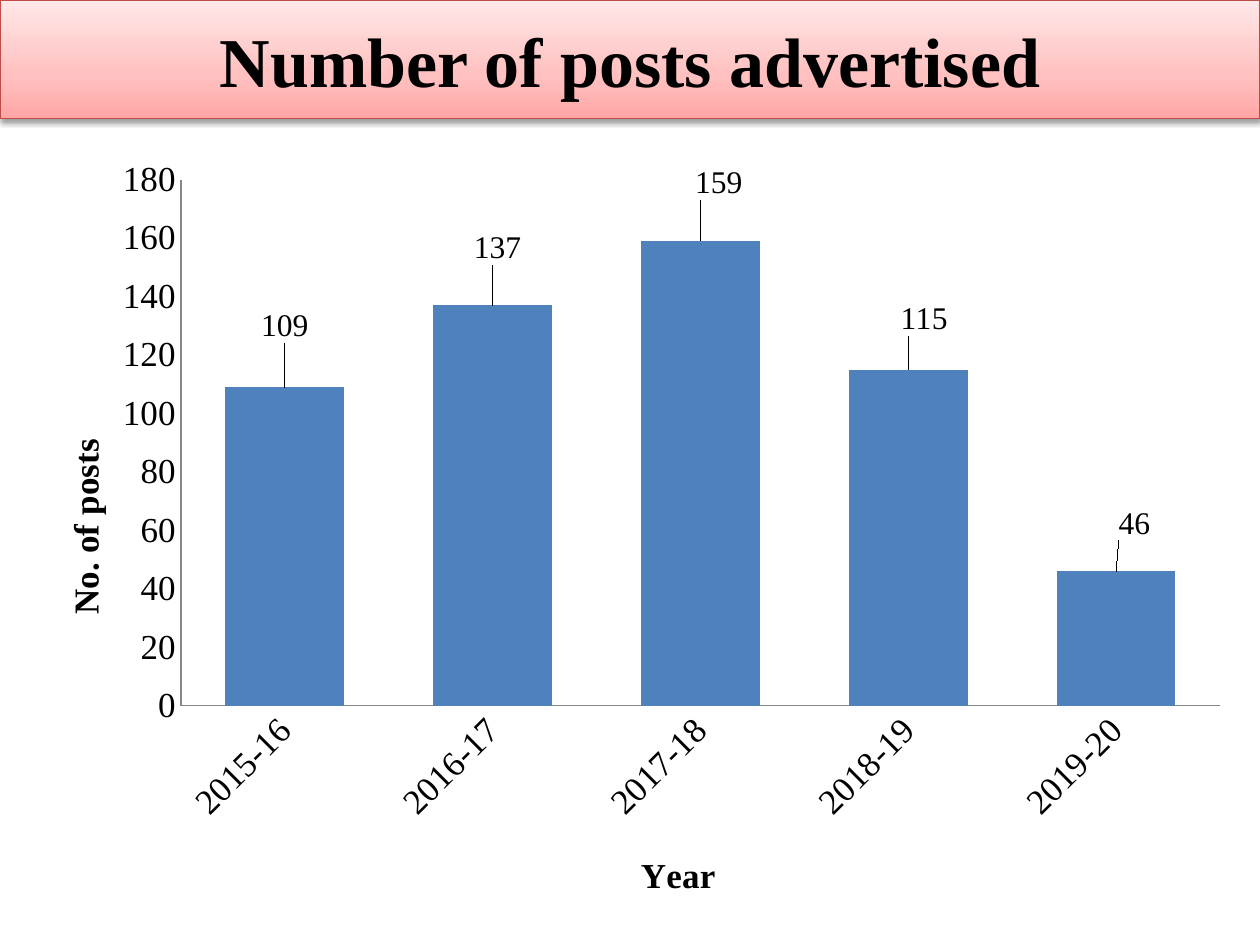
from typing import NamedTuple

from lxml import etree
from pptx import Presentation
from pptx.chart.data import CategoryChartData
from pptx.dml.color import RGBColor
from pptx.enum.chart import XL_CHART_TYPE, XL_LABEL_POSITION, XL_TICK_MARK
from pptx.enum.shapes import MSO_SHAPE
from pptx.enum.text import MSO_ANCHOR, PP_ALIGN
from pptx.oxml.ns import qn
from pptx.util import Cm, Pt

COLUMNS = XL_CHART_TYPE.COLUMN_CLUSTERED
ABOVE_BAR = XL_LABEL_POSITION.OUTSIDE_END
NO_TICK = XL_TICK_MARK.NONE
RECTANGLE = MSO_SHAPE.RECTANGLE
MIDDLE, CENTER = MSO_ANCHOR.MIDDLE, PP_ALIGN.CENTER

FONT = "Times New Roman"
COLORS = {"text": "000000", "bar": "4F81BD", "axis": "868686", "border": "BF4C48"}
BANNER_STOPS = {0: "FFA6A5", 35: "FFC0BF", 100: "FFE7E7"}  # percent: colour
TITLE_FORMAT = {"name": FONT, "size": Pt(40), "bold": True}
AXIS_TITLE_FORMAT = {"name": FONT, "size": Pt(20), "bold": True}
AXIS_FORMAT = {"name": FONT, "size": Pt(20), "bold": False}
LABEL_FORMAT = {"name": FONT, "size": Pt(18), "bold": False}


class YearPosts(NamedTuple):
    year: str
    posts: int
    label_dx: float  # label shift, percent of the chart width
    label_dy: float  # label shift, percent of the chart height


class AxisTitle(NamedTuple):
    text: str
    left: float  # percent of the chart width
    top: float  # percent of the chart height


YEARS = [
    YearPosts("2015-16", 109, 0, -5),
    YearPosts("2016-17", 137, 0.4, -4.5),
    YearPosts("2017-18", 159, 1.5, -4.6),
    YearPosts("2018-19", 115, 1.3, -3.7),
    YearPosts("2019-20", 46, 1.5, -3.3),
]
YEAR_TITLE = AxisTitle("Year", 50.4, 90.7)
POSTS_TITLE = AxisTitle("No. of posts ", 3.4, 36)
PLOT_AREA = {"x": 13.5, "y": 4.5, "w": 84.5, "h": 68}


def color(name: str) -> RGBColor:
    return RGBColor.from_string(COLORS[name])


def format_font(font, values: dict) -> None:
    for name, value in values.items():
        setattr(font, name, value)
    font.color.rgb = color("text")


def add_child(parent, tag: str, **attributes):
    child = etree.SubElement(parent, qn(tag))
    for name, value in attributes.items():
        child.set(name, str(value))
    return child


def set_layout(parent, index: int, modes: dict, places: dict) -> None:
    """Place a chart part by hand; places are percents of the chart."""
    for old in parent.findall(qn("c:layout")):
        parent.remove(old)
    layout = etree.Element(qn("c:layout"))
    manual = add_child(layout, "c:manualLayout")
    for tag, value in modes.items():
        add_child(manual, f"c:{tag}", val=value)
    for tag, value in places.items():
        add_child(manual, f"c:{tag}", val=round(value / 100, 4))
    parent.insert(index, layout)


def add_banner(page, text: str) -> None:
    banner = page.shapes.add_shape(RECTANGLE, 0, 0, Cm(25.4), Cm(2.39))
    banner.line.color.rgb = color("border")
    banner.line.width = Pt(0.75)

    # Three-step gradient, darkest at the bottom
    banner.fill.gradient()
    banner.fill.gradient_angle = 90
    properties = banner.element.spPr
    stops = properties.find(qn("a:gradFill")).find(qn("a:gsLst"))
    for stop in list(stops):
        stops.remove(stop)
    for percent, value in BANNER_STOPS.items():
        stop = add_child(stops, "a:gs", pos=percent * 1000)
        add_child(stop, "a:srgbClr", val=value)

    # Soft shadow below
    banner.shadow.inherit = False
    shadow = add_child(properties.find(qn("a:effectLst")), "a:outerShdw",
                       blurRad=Pt(3.1), dist=Pt(1.6), dir=90 * 60000, rotWithShape=0)
    shade = add_child(shadow, "a:srgbClr", val=COLORS["text"])
    add_child(shade, "a:alpha", val=38000)

    frame = banner.text_frame
    frame.word_wrap = True
    frame.vertical_anchor = MIDDLE
    para = frame.paragraphs[0]
    para.alignment = CENTER
    span = para.add_run()
    span.text = text
    format_font(span.font, TITLE_FORMAT)


def style_axis(axis, title: AxisTitle) -> None:
    axis.has_major_gridlines = False
    axis.major_tick_mark = axis.minor_tick_mark = NO_TICK
    axis.format.line.color.rgb = color("axis")
    axis.format.line.width = Pt(0.75)
    format_font(axis.tick_labels.font, AXIS_FORMAT)
    para = axis.axis_title.text_frame.paragraphs[0]
    span = para.add_run()
    span.text = title.text
    format_font(span.font, AXIS_TITLE_FORMAT)
    set_layout(axis.axis_title.format.element if hasattr(axis.axis_title.format, "element")
               else axis.axis_title.element if hasattr(axis.axis_title, "element")
               else para._p.getparent().getparent().getparent(), 1,
               {"xMode": "edge", "yMode": "edge"}, {"x": title.left, "y": title.top})


def add_posts_chart(page) -> None:
    data = CategoryChartData()
    data.categories = [item.year for item in YEARS]
    data.add_series("Series 1", [item.posts for item in YEARS])
    chart = page.shapes.add_chart(
        COLUMNS, Cm(0.3), Cm(2.92), Cm(24.79), Cm(15.6), data).chart
    chart.has_legend = chart.has_title = False
    format_font(chart.font, {"name": "Calibri", "size": Pt(10)})

    # Axes
    style_axis(chart.category_axis, YEAR_TITLE)
    style_axis(chart.value_axis, POSTS_TITLE)
    chart.value_axis.minimum_scale = 0
    chart.value_axis.maximum_scale = 180
    chart.value_axis.major_unit = 20
    labels_body = chart.category_axis.tick_labels.font._element.getparent()
    labels_body.getparent().getparent().find(qn("a:bodyPr")).set("rot", str(-45 * 60000))

    # Bars
    plot = chart.plots[0]
    plot.gap_width = 75
    plot.vary_by_categories = False
    series = plot.series[0]
    series.format.fill.solid()
    series.format.fill.fore_color.rgb = color("bar")

    # Value labels, each nudged away from its bar
    series.data_labels.show_value = True
    format_font(series.data_labels.font, LABEL_FORMAT)
    for index, item in enumerate(YEARS):
        label = series.points[index].data_label
        format_font(label.font, LABEL_FORMAT)
        label.position = ABOVE_BAR
    label_elements = chart.element.iter(qn("c:dLbl")) if hasattr(chart, "element") \
        else series._element.iter(qn("c:dLbl"))
    for element, item in zip(list(label_elements), YEARS):
        set_layout(element, 1, {}, {"x": item.label_dx, "y": item.label_dy})

    plot_area = series._element.getparent().getparent()
    set_layout(plot_area, 0, {"layoutTarget": "inner", "xMode": "edge", "yMode": "edge"},
               PLOT_AREA)


def main() -> None:
    deck = Presentation()
    deck.slide_width, deck.slide_height = Cm(25.4), Cm(19.05)
    page = deck.slides.add_slide(deck.slide_layouts[6])
    add_banner(page, "Number of posts advertised")
    add_posts_chart(page)
    deck.save("out.pptx")


if __name__ == "__main__":
    main()
